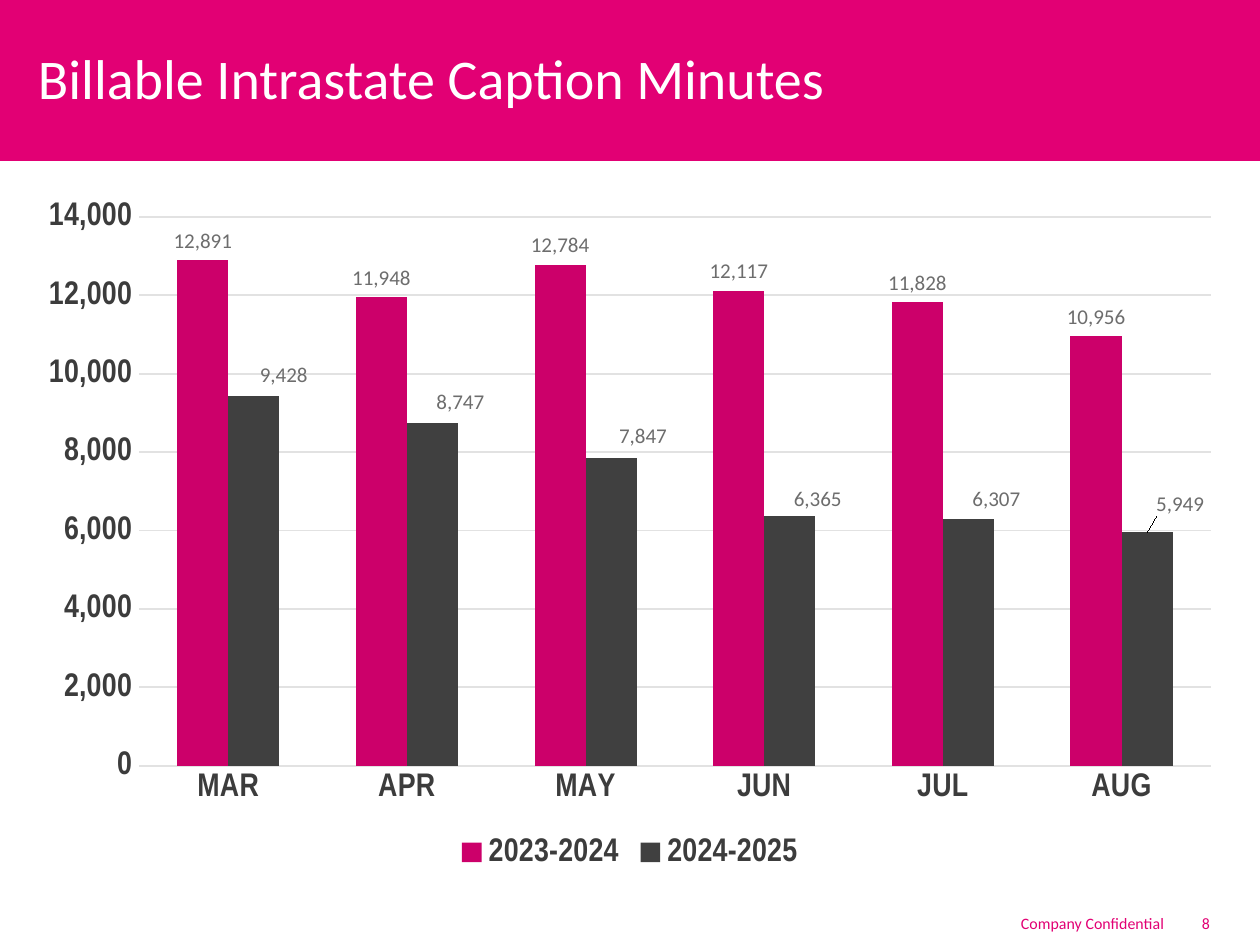
from pptx import Presentation
from pptx.chart.data import CategoryChartData
from pptx.dml.color import RGBColor
from pptx.enum.chart import XL_CHART_TYPE, XL_LABEL_POSITION, XL_LEGEND_POSITION, XL_TICK_MARK
from pptx.enum.shapes import MSO_SHAPE
from pptx.enum.text import MSO_ANCHOR, PP_ALIGN
from pptx.oxml import parse_xml
from pptx.oxml.ns import nsdecls
from pptx.util import Pt

PX = 914400 // 168
MAGENTA = RGBColor(0xE2, 0x00, 0x74)
BAR_MAGENTA = RGBColor(0xCC, 0x00, 0x6A)
BAR_GREY = RGBColor(0x40, 0x40, 0x40)
TEXT = RGBColor(0x3C, 0x3C, 0x3C)
LABEL = RGBColor(0x6D, 0x6D, 0x6D)
GRID = RGBColor(0xE2, 0xE2, 0xE2)
WHITE = RGBColor(0xFF, 0xFF, 0xFF)
LEFT, RIGHT = PP_ALIGN.LEFT, PP_ALIGN.RIGHT
MIDDLE = MSO_ANCHOR.MIDDLE
OUTSIDE_END = XL_LABEL_POSITION.OUTSIDE_END
NO_TICK = XL_TICK_MARK.NONE
CHART_W, CHART_H = 1210, 687


def set_font(font, size, color, name="Calibri", bold=False):
    font.size, font.name, font.bold = Pt(size), name, bold
    font.color.rgb = color


def layout_xml(x, y, w=None, h=None):
    """Manual layout in chart px: an offset, or a full inner plot area."""
    parts = [("x", x / CHART_W), ("y", y / CHART_H)]
    modes = ""
    if w:
        parts += [("w", w / CHART_W), ("h", h / CHART_H)]
        modes = '<c:layoutTarget val="inner"/><c:xMode val="edge"/><c:yMode val="edge"/>'
    values = "".join(f'<c:{tag} val="{v:.4f}"/>' for tag, v in parts)
    return parse_xml(f'<c:layout {nsdecls("c")}><c:manualLayout>{modes}{values}'
                     '</c:manualLayout></c:layout>')


prs = Presentation()
prs.slide_width, prs.slide_height = 1260 * PX, 945 * PX
s = prs.slides.add_slide(prs.slide_layouts[6])

# Header band
band = s.shapes.add_shape(MSO_SHAPE.RECTANGLE, 0, 0, 1260 * PX, 161 * PX)
band.shadow.inherit = False
band.fill.solid()
band.fill.fore_color.rgb = MAGENTA
band.line.fill.background()

# Title, footer and slide number
for text, x, y, w, h, mx, my, size, color, align in (
    ("Billable Intrastate Caption Minutes", 25, 27, 1216, 101, 13, 7, 24, WHITE, LEFT),
    ("Company Confidential", 774, 909, 400, 28, 10, 5, 6.8, MAGENTA, RIGHT),
    ("8", 1192, 909, 64, 28, 10, 5, 6.8, MAGENTA, LEFT),
):
    tf = s.shapes.add_textbox(x * PX, y * PX, w * PX, h * PX).text_frame
    tf.word_wrap = True
    tf.vertical_anchor = MIDDLE
    tf.margin_left = tf.margin_right = mx * PX
    tf.margin_top = tf.margin_bottom = my * PX
    tf.text = text
    p = tf.paragraphs[0]
    p.alignment = align
    set_font(p.runs[0].font, size, color)

# Column chart
data = CategoryChartData(number_format="#,##0")
data.categories = ["MAR", "APR", "MAY", "JUN", "JUL", "AUG"]
data.add_series("2023-2024", (12891, 11948, 12784, 12117, 11828, 10956))
data.add_series("2024-2025", (9428, 8747, 7847, 6365, 6307, 5949))
chart = s.shapes.add_chart(XL_CHART_TYPE.COLUMN_CLUSTERED, 25 * PX, 188 * PX,
                           CHART_W * PX, CHART_H * PX, data).chart
set_font(chart.font, 10, TEXT)
chart.has_title = False
chart.has_legend = True
chart.legend.position = XL_LEGEND_POSITION.BOTTOM
chart.legend.include_in_layout = False
set_font(chart.legend.font, 14, TEXT, "Arial Narrow", True)

plot_area = chart.plots[0]
plot_area.gap_width, plot_area.overlap = 150, 0
plot_area.vary_by_categories = False
area = chart.element.chart.plotArea
for old in area.findall("{*}layout"):
    area.remove(old)
area.insert(0, layout_xml(114, 29, 1072, 549))

# Axes
for axis in (chart.category_axis, chart.value_axis):
    axis.major_tick_mark = axis.minor_tick_mark = NO_TICK
    axis.format.line.fill.background()
    set_font(axis.tick_labels.font, 14, TEXT, "Arial Narrow", True)
values = chart.value_axis
values.minimum_scale, values.maximum_scale, values.major_unit = 0, 14000, 2000
values.tick_labels.number_format = "#,##0"
values.tick_labels.number_format_is_linked = False
values.major_gridlines.format.line.color.rgb = GRID
values.major_gridlines.format.line.width = Pt(0.75)

# Series colours and value labels
for series, color in zip(plot_area.series, (BAR_MAGENTA, BAR_GREY)):
    series.format.fill.solid()
    series.format.fill.fore_color.rgb = color
    labels = series.data_labels
    labels.show_value = True
    labels.number_format = "#,##0"
    labels.number_format_is_linked = False
    labels.position = OUTSIDE_END
    set_font(labels.font, 9, LABEL)

# Labels of the second series sit to the right of their columns
grey = plot_area.series[1]
offsets = ((30, -2), (28, -2), (32, -3), (28, 2), (28, 0), (33, -9))
for i, (dx, dy) in enumerate(offsets):
    label = grey.points[i].data_label
    set_font(label.font, 9, LABEL)
    label.position = OUTSIDE_END
    node = grey.data_labels._element.findall("{*}dLbl")[i]
    node.insert(1, layout_xml(dx, dy))

prs.save("out.pptx")
